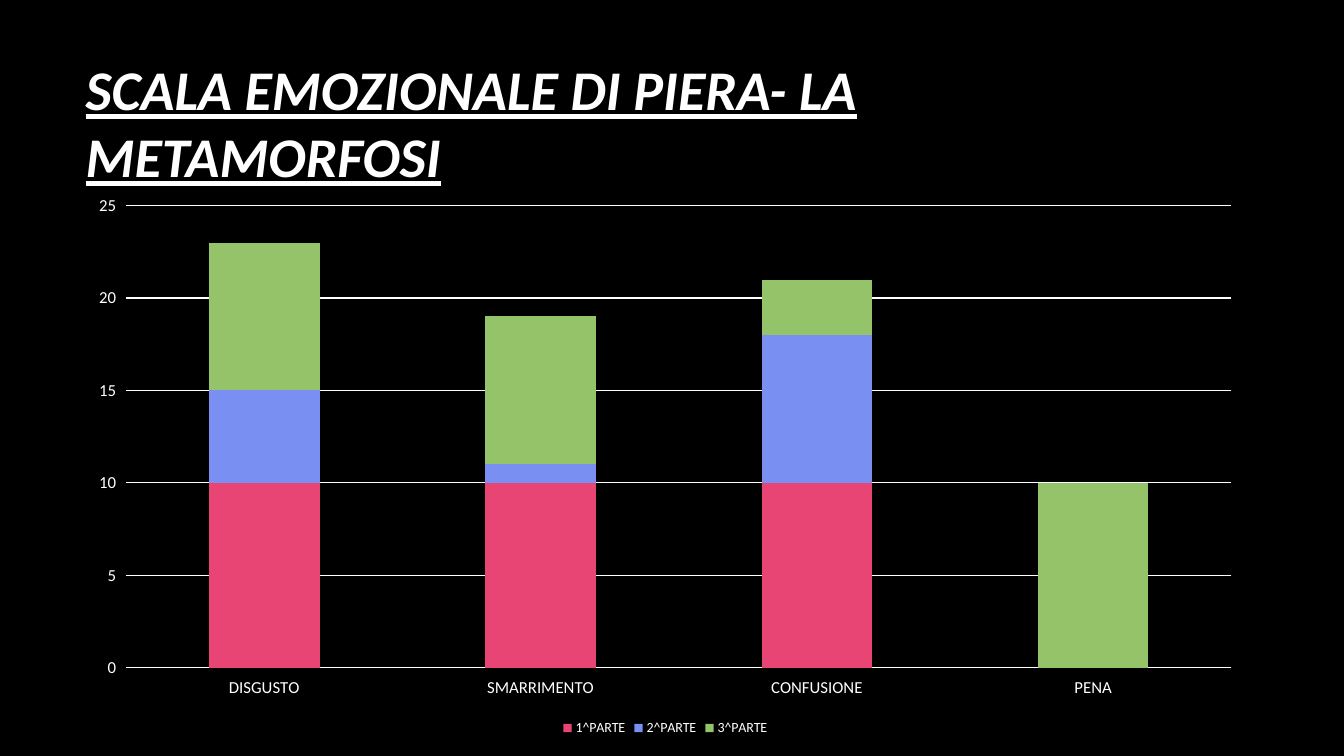
from pptx import Presentation
from pptx.chart.data import CategoryChartData
from pptx.dml.color import RGBColor
from pptx.enum.chart import XL_CHART_TYPE as ChartType, XL_LEGEND_POSITION as LegendPosition
from pptx.enum.text import MSO_ANCHOR as Anchor, PP_ALIGN as Align
from pptx.util import Pt

TITLE = "SCALA EMOZIONALE DI PIERA- LA METAMORFOSI"
EMOTIONS = ["DISGUSTO", "SMARRIMENTO", "CONFUSIONE", "PENA"]
PARTS = [
    ("1^PARTE", "pink", (10, 10, 10, 0)),
    ("2^PARTE", "blue", (5, 1, 8, 0)),
    ("3^PARTE", "green", (8, 8, 3, 10)),
]
COLORS = {"black": "000000", "white": "FFFFFF",
          "pink": "E84574", "blue": "798FF2", "green": "95C369"}
FONT = "Calibri"
LEFT = 54


def color(name):
    return RGBColor.from_string(COLORS[name])


def style_font(font, size):
    font.name = FONT
    font.size = Pt(size)
    font.color.rgb = color("white")


presentation = Presentation()
presentation.slide_width, presentation.slide_height = Pt(960), Pt(540)
slide = presentation.slides.add_slide(presentation.slide_layouts[5])
slide.background.fill.solid()
slide.background.fill.fore_color.rgb = color("black")

# Title
title = slide.shapes.title
title.left, title.top, title.width, title.height = Pt(LEFT), Pt(11.5), Pt(798), Pt(151)
title.text_frame.text = TITLE
title.text_frame.word_wrap = True
title.text_frame.vertical_anchor = Anchor.MIDDLE
paragraph = title.text_frame.paragraphs[0]
paragraph.alignment = Align.LEFT
style_font(paragraph.font, 40)
paragraph.font.bold = paragraph.font.italic = paragraph.font.underline = True

# Stacked columns: one series per part of the story
chart_data = CategoryChartData()
chart_data.categories = EMOTIONS
for name, _, values in PARTS:
    chart_data.add_series(name, values)
chart = slide.shapes.add_chart(ChartType.COLUMN_STACKED, Pt(LEFT), Pt(131.8),
                               Pt(842.4), Pt(396.7), chart_data).chart
chart.has_title = False
style_font(chart.font, 10)

plot = chart.plots[0]
plot.gap_width, plot.overlap = 150, 100
plot.vary_by_categories = False
for series, (_, fill_name, _) in zip(plot.series, PARTS):
    series.format.fill.solid()
    series.format.fill.fore_color.rgb = color(fill_name)

# Axes, gridlines and legend
for axis in (chart.category_axis, chart.value_axis):
    style_font(axis.tick_labels.font, 12)
    axis.format.line.fill.background()
gridlines = chart.value_axis.major_gridlines.format.line
gridlines.width = Pt(0.75)
gridlines.color.rgb = color("white")

chart.has_legend = True
chart.legend.position = LegendPosition.BOTTOM
chart.legend.include_in_layout = False
style_font(chart.legend.font, 10)

presentation.save("out.pptx")
